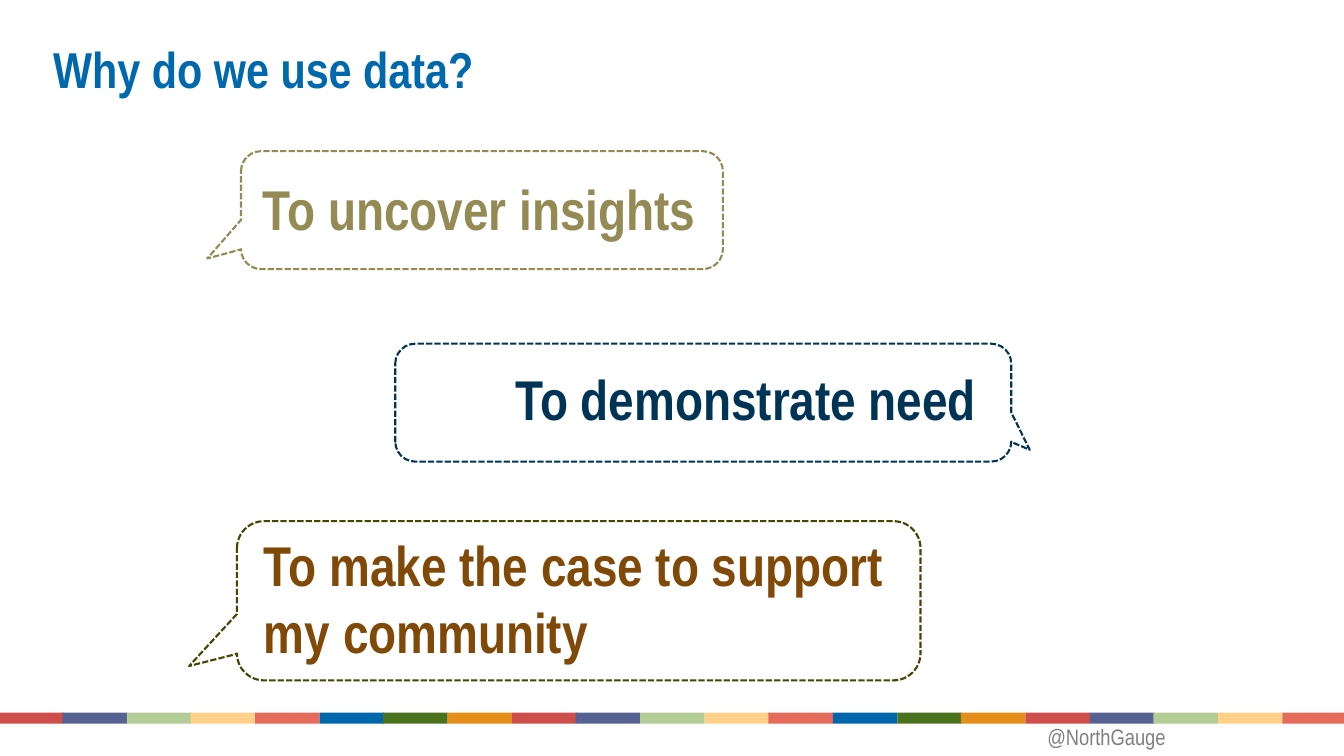
import pptx
import pptx.dml.color
import pptx.enum.dml
import pptx.enum.shapes
import pptx.enum.text
import pptx.util

SCALE = 9144
FONT = "Arial Narrow"
COLORS = {
    "title": "0068AC",
    "handle": "808080",
    "tan": "948A54",
    "navy": "003456",
    "brown": "814907",
    "olive": "464600",
    "red": "CF4D4B",
    "slate": "556292",
    "sage": "B4CC95",
    "sand": "FFD087",
    "coral": "E66B5B",
    "blue": "0067AC",
    "green": "4B721D",
    "orange": "E58E1A",
}
STRIPE = ["red", "slate", "sage", "sand", "coral", "blue", "green", "orange"]
BARS = 21
SHAPE = pptx.enum.shapes.MSO_SHAPE
ALIGN = pptx.enum.text.PP_ALIGN
ANCHOR = pptx.enum.text.MSO_ANCHOR


def px(count):
    return pptx.util.Emu(count * SCALE)


def color(name):
    return pptx.dml.color.RGBColor.from_string(COLORS[name])


def add_text(slide, box, words, size, tint, bold=True, align=ALIGN.LEFT,
             anchor=ANCHOR.MIDDLE, top=5):
    frame = slide.shapes.add_textbox(*map(px, box)).text_frame
    frame.word_wrap = True
    frame.vertical_anchor = anchor
    frame.margin_top = px(top)
    para = frame.paragraphs[0]
    para.alignment = align
    run = para.add_run()
    run.text = words
    run.font.name = FONT
    run.font.size = pptx.util.Pt(size)
    run.font.bold = bold
    run.font.color.rgb = color(tint)


def add_bubble(slide, box, tint, tip):
    bubble = slide.shapes.add_shape(SHAPE.ROUNDED_RECTANGULAR_CALLOUT, *map(px, box))
    bubble.shadow.inherit = False
    bubble.fill.background()
    bubble.line.color.rgb = color(tint)
    bubble.line.width = pptx.util.Pt(1.5)
    bubble.line.dash_style = pptx.enum.dml.MSO_LINE.SQUARE_DOT
    bubble.adjustments[0], bubble.adjustments[1] = tip
    bubble.adjustments[2] = 0.17


def add_stripe(slide):
    group = slide.shapes.add_group_shape()
    for i in range(BARS):
        left = 1273 * i // 20 - 1
        bar = group.shapes.add_shape(SHAPE.RECTANGLE, px(left), px(707), px(64), px(11))
        bar.shadow.inherit = False
        bar.fill.solid()
        bar.fill.fore_color.rgb = color(STRIPE[i % len(STRIPE)])
        bar.line.fill.background()


def main():
    deck = pptx.Presentation()
    deck.slide_width, deck.slide_height = px(1333), px(750)
    slide = deck.slides.add_slide(deck.slide_layouts[6])
    add_stripe(slide)
    add_text(slide, (43, 25, 1243, 137), "Why do we use data?", 36, "title",
             anchor=ANCHOR.TOP, top=13)
    add_text(slide, (794, 713, 372, 37), "@NorthGauge", 16, "handle",
             bold=False, align=ALIGN.RIGHT, anchor=ANCHOR.TOP)
    add_bubble(slide, (239, 150, 478, 117), "tan", (-0.57, 0.41))
    add_text(slide, (251, 171, 474, 71), "To uncover insights", 40, "tan")
    add_bubble(slide, (235, 517, 678, 158), "olive", (-0.57, 0.41))
    add_text(slide, (252, 545, 673, 96), "To make the case to support my community",
             40, "brown")
    add_bubble(slide, (392, 341, 611, 117), "navy", (0.53, 0.4))
    add_text(slide, (496, 356, 482, 77), "To demonstrate need", 40, "navy",
             align=ALIGN.RIGHT)
    deck.save("out.pptx")


if __name__ == "__main__":
    main()
